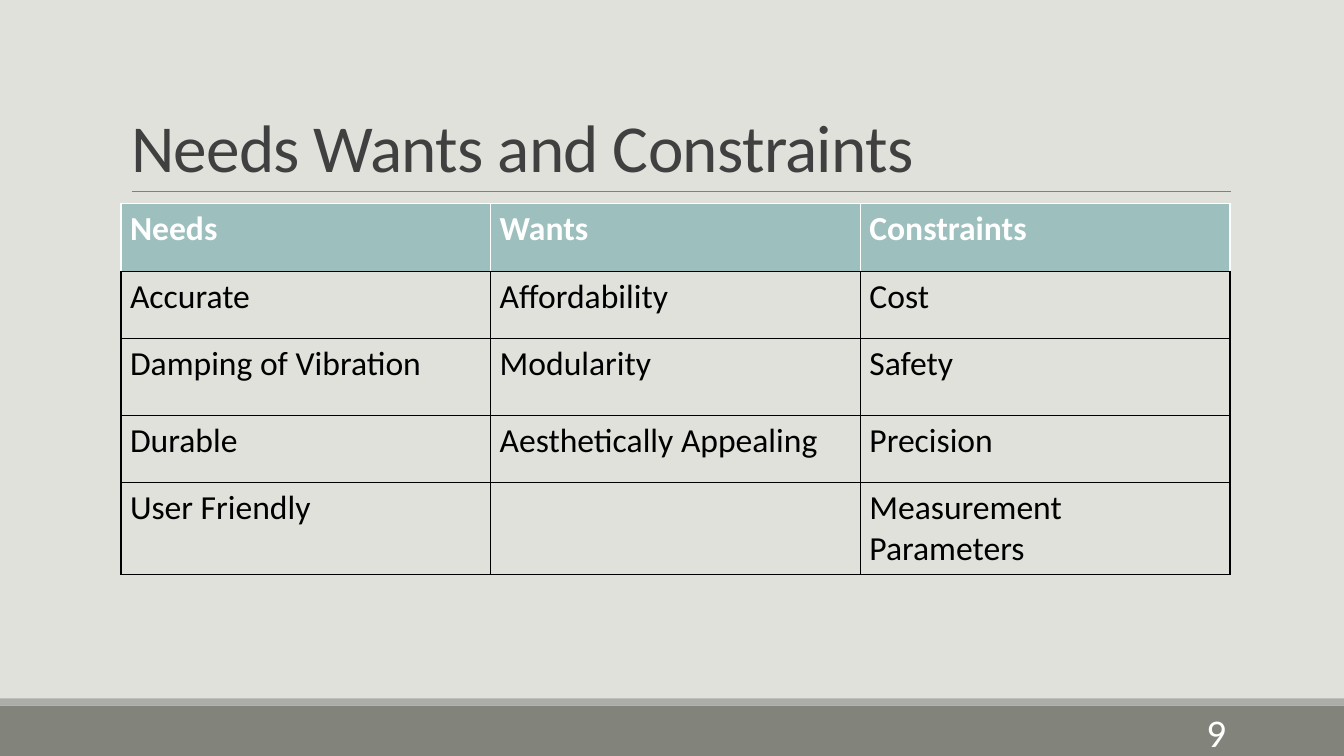
from lxml.etree import SubElement
from pptx import Presentation
from pptx.dml.color import RGBColor
from pptx.enum.shapes import MSO_CONNECTOR, MSO_SHAPE
from pptx.enum.text import MSO_ANCHOR, MSO_AUTO_SIZE, PP_ALIGN
from pptx.oxml.ns import qn
from pptx.util import Inches, Pt


def add_run(paragraph, text, size, color, bold=False):
    run = paragraph.add_run()
    run.text = text
    run.font.name = "Calibri"
    run.font.size = Pt(size)
    run.font.bold = bold
    run.font.color.rgb = RGBColor.from_string(color)
    return run


def add_border(cell, side, color):
    """Draw a 1 pt border; call before the cell's fill is set, as the schema orders them."""
    line = SubElement(cell._tc.get_or_add_tcPr(), qn(f"a:ln{side}"), w=str(Pt(1)))
    SubElement(SubElement(line, qn("a:solidFill")), qn("a:srgbClr"), val=color)


presentation = Presentation()
presentation.slide_width = Inches(13.33)
presentation.slide_height = Inches(7.5)
slide = presentation.slides.add_slide(presentation.slide_layouts[5])
slide.background.fill.solid()
slide.background.fill.fore_color.rgb = RGBColor.from_string("E1E1DB")

# Footer bands
for top, height, color in [(7, 0.5, "82847C"), (6.93, 0.07, "ACADA8")]:
    band = slide.shapes.add_shape(
        MSO_SHAPE.RECTANGLE, 0, Inches(top), Inches(13.33), Inches(height))
    band.shadow.inherit = False
    band.fill.solid()
    band.fill.fore_color.rgb = RGBColor.from_string(color)
    band.line.fill.background()

# Title and the rule below it
title_rule = slide.shapes.add_connector(
    MSO_CONNECTOR.STRAIGHT, Inches(1.31), Inches(1.9), Inches(12.21), Inches(1.9))
title_rule.line.color.rgb = RGBColor.from_string("808080")
title_rule.line.width = Pt(0.5)
SubElement(title_rule._element.spPr, qn("a:effectLst"))

title = slide.shapes.title
title.left, title.top = Inches(1.2), Inches(0.31)
title.width, title.height = Inches(11), Inches(1.59)
title.text_frame.auto_size = MSO_AUTO_SIZE.NONE
title.text_frame.vertical_anchor = MSO_ANCHOR.BOTTOM
heading = title.text_frame.paragraphs[0]
heading.alignment = PP_ALIGN.LEFT
heading.line_spacing = 0.85
heading_run = add_run(heading, "Needs Wants and Constraints", 48, "404040")
heading_run._r.get_or_add_rPr().set("spc", "-50")

# Requirements table
requirements = [
    ("Needs", "Wants", "Constraints"),
    ("Accurate", "Affordability", "Cost"),
    ("Damping of Vibration", "Modularity", "Safety"),
    ("Durable", "Aesthetically Appealing", "Precision"),
    ("User Friendly", "", "Measurement Parameters"),
]
row_heights = [0.67, 0.67, 0.76, 0.67, 0.91]
table = slide.shapes.add_table(
    len(requirements), 3, Inches(1.2), Inches(2.02), Inches(11), Inches(sum(row_heights))).table
table.horz_banding = False
for column in table.columns:
    column.width = Inches(11 / 3)

for row_index, (entries, height) in enumerate(zip(requirements, row_heights)):
    table.rows[row_index].height = Inches(height)
    is_header = row_index == 0
    for column_index, entry in enumerate(entries):
        cell = table.cell(row_index, column_index)
        cell.margin_left = cell.margin_right = Inches(0.09)
        cell.margin_top = cell.margin_bottom = Inches(0.05)
        for side in "LRTB":
            add_border(cell, side, "FFFFFF" if is_header and side != "B" else "000000")
        if is_header:
            cell.fill.solid()
            cell.fill.fore_color.rgb = RGBColor.from_string("9DBFBE")
        else:
            cell.fill.background()
        if entry:
            add_run(cell.text_frame.paragraphs[0], entry, 24,
                    "FFFFFF" if is_header else "000000", is_header)

# Slide number
page_number = slide.shapes.add_textbox(Inches(10.83), Inches(7.06), Inches(1.43), Inches(0.4))
page_number.text_frame.word_wrap = True
page_number.text_frame.vertical_anchor = MSO_ANCHOR.MIDDLE
page_number.text_frame.paragraphs[0].alignment = PP_ALIGN.RIGHT
add_run(page_number.text_frame.paragraphs[0], "9", 28, "FFFFFF")

presentation.save("out.pptx")
